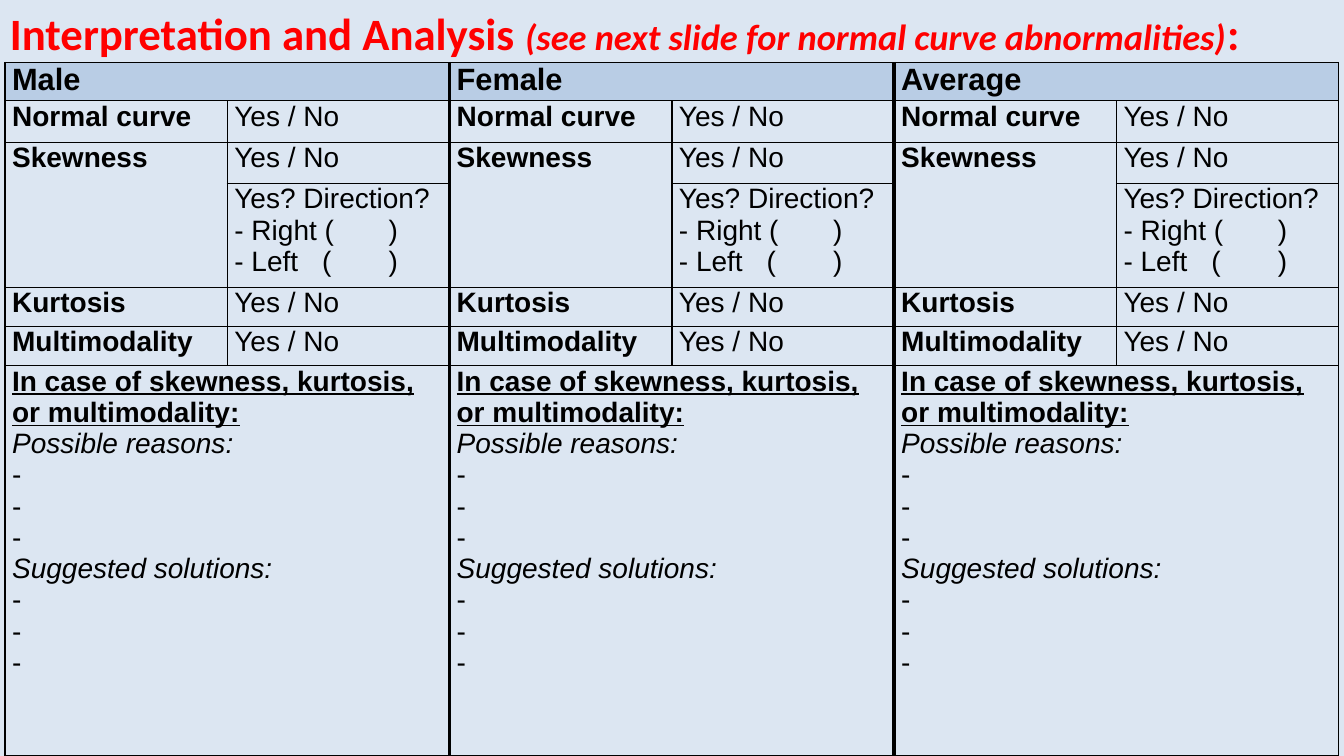
from pptx import Presentation
from pptx.dml.color import RGBColor
from pptx.enum.text import MSO_ANCHOR, MSO_AUTO_SIZE
from pptx.oxml import parse_xml
from pptx.oxml.ns import nsdecls
from pptx.util import Inches, Pt

TOP = MSO_ANCHOR.TOP
GROW = MSO_AUTO_SIZE.SHAPE_TO_FIT_TEXT
BLACK = RGBColor(0x00, 0x00, 0x00)
RED = RGBColor(0xFF, 0x00, 0x00)
PALE_BLUE = RGBColor(0xDC, 0xE6, 0xF2)
HEADER_BLUE = RGBColor(0xB9, 0xCD, 0xE5)

PLAIN = {"name": "Arial", "size": Pt(20), "bold": False}
BOLD = {**PLAIN, "bold": True}
HEADING = {**BOLD, "size": Pt(22)}
UNDERLINED = {**BOLD, "underline": True}
ITALIC = {**PLAIN, "italic": True}
TITLE = {"name": "Calibri", "size": Pt(32), "bold": True}
ASIDE = {**TITLE, "size": Pt(26), "italic": True}

GROUPS = ["Male", "Female", "Average"]
ROW_HEIGHTS = [0.38, 0.41, 0.41, 1.03, 0.39, 0.39, 3.87]
LABELS = {1: "Normal curve", 2: "Skewness", 4: "Kurtosis", 5: "Multimodality"}
DIRECTION_ROW = 3
REASONS_ROW = len(ROW_HEIGHTS) - 1
DIRECTION = [("Yes? Direction?", PLAIN), ("- Right (\t)", PLAIN), ("- Left\t(\t)", PLAIN)]
DASHES = [("-", PLAIN)] * 3
REASONS = [
    ("In case of skewness, kurtosis, or multimodality:", UNDERLINED),
    ("Possible reasons:", ITALIC), *DASHES,
    ("Suggested solutions:", ITALIC), *DASHES,
]


def add_run(paragraph, text, style, color=BLACK):
    run = paragraph.add_run()
    run.text = text
    for attribute, value in style.items():
        setattr(run.font, attribute, value)
    run.font.color.rgb = color


def write(cell, lines):
    """Fill a cell with one paragraph per (text, style) pair."""
    frame = cell.text_frame
    for index, (text, style) in enumerate(lines):
        paragraph = frame.add_paragraph() if index else frame.paragraphs[0]
        if "\t" in text:
            paragraph._p.get_or_add_pPr().append(parse_xml(
                f'<a:tabLst {nsdecls("a")}>'
                f'<a:tab pos="{Inches(0.87)}" algn="l"/>'
                f'<a:tab pos="{Inches(1.53)}" algn="l"/></a:tabLst>'))
        add_run(paragraph, text, style)


prs = Presentation()
prs.slide_width, prs.slide_height = Inches(13.33), Inches(7.5)
slide = prs.slides.add_slide(prs.slide_layouts[6])
slide.background.fill.solid()
slide.background.fill.fore_color.rgb = PALE_BLUE

# Analysis table: two columns per group
column_count = 2 * len(GROUPS)
analysis = slide.shapes.add_table(
    len(ROW_HEIGHTS), column_count, Inches(0.05), Inches(0.62),
    Inches(13.23), Inches(sum(ROW_HEIGHTS))).table
analysis.first_row = analysis.horz_banding = False
for row, height in zip(analysis.rows, ROW_HEIGHTS):
    row.height = Inches(height)

for r in range(len(ROW_HEIGHTS)):
    for c in range(column_count):
        cell = analysis.cell(r, c)
        cell.margin_left = cell.margin_right = Inches(0.07)
        cell.margin_top = cell.margin_bottom = 0
        cell.vertical_anchor = TOP
        widths = {
            "lnL": 3 if c in (2, 4) else 1,
            "lnR": 3 if c in (1, 3) else 1,
            "lnT": 1,
            "lnB": 1,
        }
        for side, width in widths.items():
            cell._tc.get_or_add_tcPr().append(parse_xml(
                f'<a:{side} {nsdecls("a")} w="{Pt(width)}"><a:solidFill>'
                f'<a:srgbClr val="{BLACK}"/></a:solidFill></a:{side}>'))
        if r == 0:
            cell.fill.solid()
            cell.fill.fore_color.rgb = HEADER_BLUE
        else:
            cell.fill.background()

for g, group in enumerate(GROUPS):
    left, right = 2 * g, 2 * g + 1
    for r in (0, REASONS_ROW):
        analysis.cell(r, left).merge(analysis.cell(r, right))
    analysis.cell(2, left).merge(analysis.cell(DIRECTION_ROW, left))
    write(analysis.cell(0, left), [(group, HEADING)])
    for r, label in LABELS.items():
        write(analysis.cell(r, left), [(label, BOLD)])
        write(analysis.cell(r, right), [("Yes / No", PLAIN)])
    write(analysis.cell(DIRECTION_ROW, right), DIRECTION)
    write(analysis.cell(REASONS_ROW, left), REASONS)

# Title
title = slide.shapes.add_textbox(0, Inches(0.01), Inches(13.23), Inches(0.64)).text_frame
title.word_wrap = True
title.auto_size = GROW
for text, style in [
    ("Interpretation and Analysis ", TITLE),
    ("(see next slide for normal curve abnormalities)", ASIDE),
    (":", TITLE),
]:
    add_run(title.paragraphs[0], text, style, RED)

prs.save("out.pptx")
